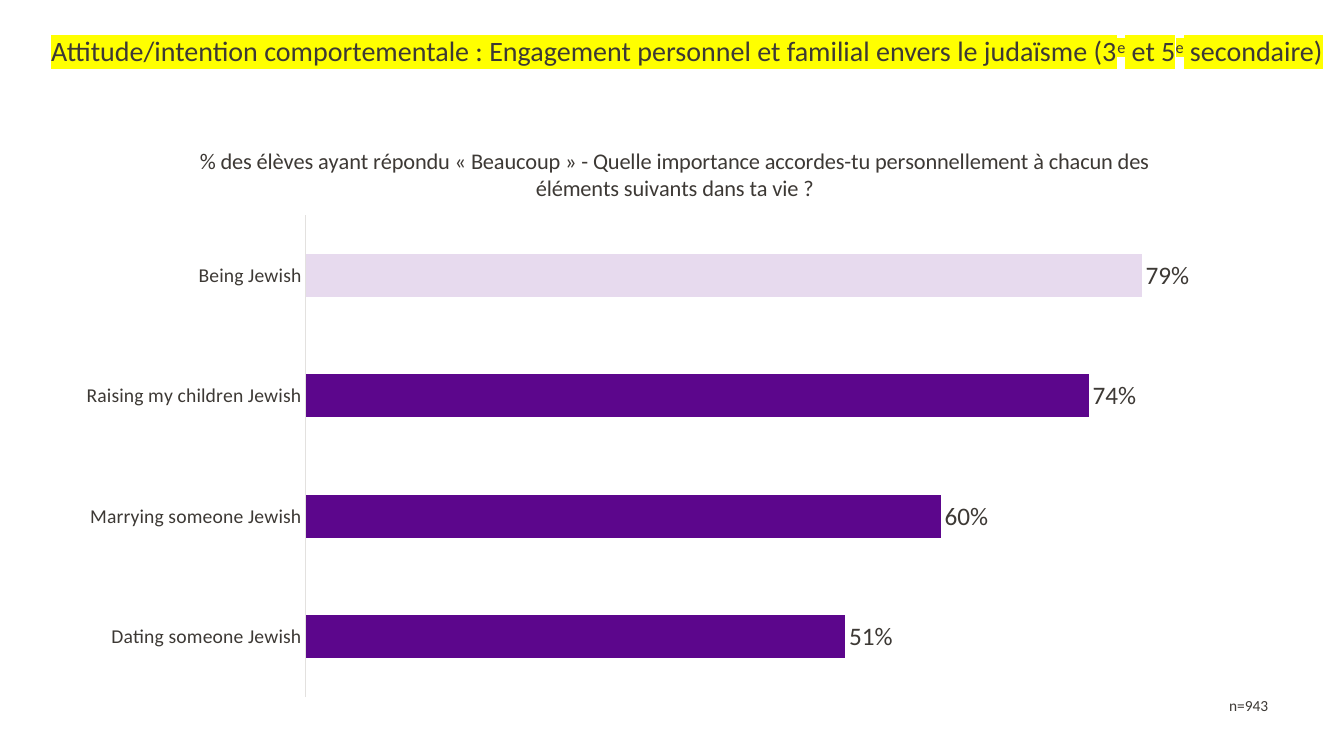
"""Build the slide on personal and family commitment to Judaism."""
from lxml import etree
from pptx import Presentation
from pptx.chart.data import CategoryChartData
from pptx.dml.color import RGBColor
from pptx.enum.chart import XL_CHART_TYPE as CT, XL_LABEL_POSITION as LP, XL_TICK_MARK as TM
from pptx.enum.text import MSO_ANCHOR as ANCHOR, PP_ALIGN as ALIGN
from pptx.oxml.ns import qn
from pptx.util import Inches, Pt

INK = "3D3935"


def style(font, size, color=INK):
    values = {"name": "Calibri", "size": Pt(size), "bold": False}
    for key, value in values.items():
        setattr(font, key, value)
    font.color.rgb = RGBColor.from_string(color)


def place(parent, index, **values):
    for old in parent.findall(qn("c:layout")):
        parent.remove(old)
    layout = etree.Element(qn("c:layout"))
    parent.insert(index, layout)
    manual = etree.SubElement(layout, qn("c:manualLayout"))
    for key, value in values.items():
        etree.SubElement(manual, qn(f"c:{key}")).set("val", str(value))


prs = Presentation()
prs.slide_width, prs.slide_height = Inches(13.33), Inches(7.5)
s = prs.slides.add_slide(prs.slide_layouts[6])

tf = s.shapes.add_textbox(Inches(0.41), Inches(0.06), Inches(12.92), Inches(0.92)).text_frame
tf.word_wrap = True
tf.vertical_anchor = ANCHOR.MIDDLE
p = tf.paragraphs[0]
p.line_spacing = 0.9
heading = [
    ("Attitude/intention comportementale : Engagement personnel et familial envers le judaïsme (3", False),
    ("e", True), (" et 5", False), ("e", True), (" secondaire)", False),
]
for text, raised in heading:
    r = p.add_run()
    r.text = text
    style(r.font, 20)
    rpr = r.font._element
    mark = etree.Element(qn("a:highlight"))
    etree.SubElement(mark, qn("a:srgbClr")).set("val", "FFFF00")
    rpr.find(qn("a:solidFill")).addnext(mark)
    if raised:
        rpr.set("baseline", "30000")

data = CategoryChartData(number_format="0%")
data.categories = ["Being Jewish", "Raising my children Jewish",
                   "Marrying someone Jewish", "Dating someone Jewish"]
data.add_series("Series 1", [0.79, 0.74, 0.6, 0.51])
chart = s.shapes.add_chart(CT.BAR_CLUSTERED, Inches(0.61), Inches(1.17),
                           Inches(12.11), Inches(5.87), data).chart
style(chart.font, 18)
chart.has_legend = False
chart.has_title = True
p = chart.chart_title.text_frame.paragraphs[0]
r = p.add_run()
r.text = ("% des élèves ayant répondu « Beaucoup » - Quelle importance accordes-tu "
          "personnellement à chacun des éléments suivants dans ta vie ?")
style(r.font, 16)
place(chart.chart_title._element, 1, xMode="edge", yMode="edge", x=0.11, y=0.04)

axis = chart.category_axis
axis.reverse_order = True
axis.major_tick_mark = axis.minor_tick_mark = TM.NONE
axis.format.line.width = Pt(0.75)
axis.format.line.color.rgb = RGBColor.from_string("E3E1DF")
style(axis.tick_labels.font, 14)
axis = chart.value_axis
axis.minimum_scale, axis.maximum_scale = 0, 0.9
axis.has_major_gridlines = False
axis.visible = False

plot = chart.plots[0]
plot.gap_width = 182
plot.vary_by_categories = False
series = plot.series[0]
for target, color in [(series, "5C068C"), (series.points[0], "E7DAEE")]:
    target.format.fill.solid()
    target.format.fill.fore_color.rgb = RGBColor.from_string(color)
labels = series.data_labels
for key, value in {"show_value": True, "position": LP.OUTSIDE_END,
                   "number_format": "0%", "number_format_is_linked": False}.items():
    setattr(labels, key, value)
style(labels.font, 18)
place(plot._element.getparent(), 0, layoutTarget="inner", xMode="edge", yMode="edge",
      x=0.2, y=0.164, w=0.78, h=0.815)

tf = s.shapes.add_textbox(Inches(11.88), Inches(6.86), Inches(1.01), Inches(0.29)).text_frame
tf.word_wrap = True
p = tf.paragraphs[0]
p.alignment = ALIGN.CENTER
r = p.add_run()
r.text = "n=943"
style(r.font, 11)

prs.save("out.pptx")
